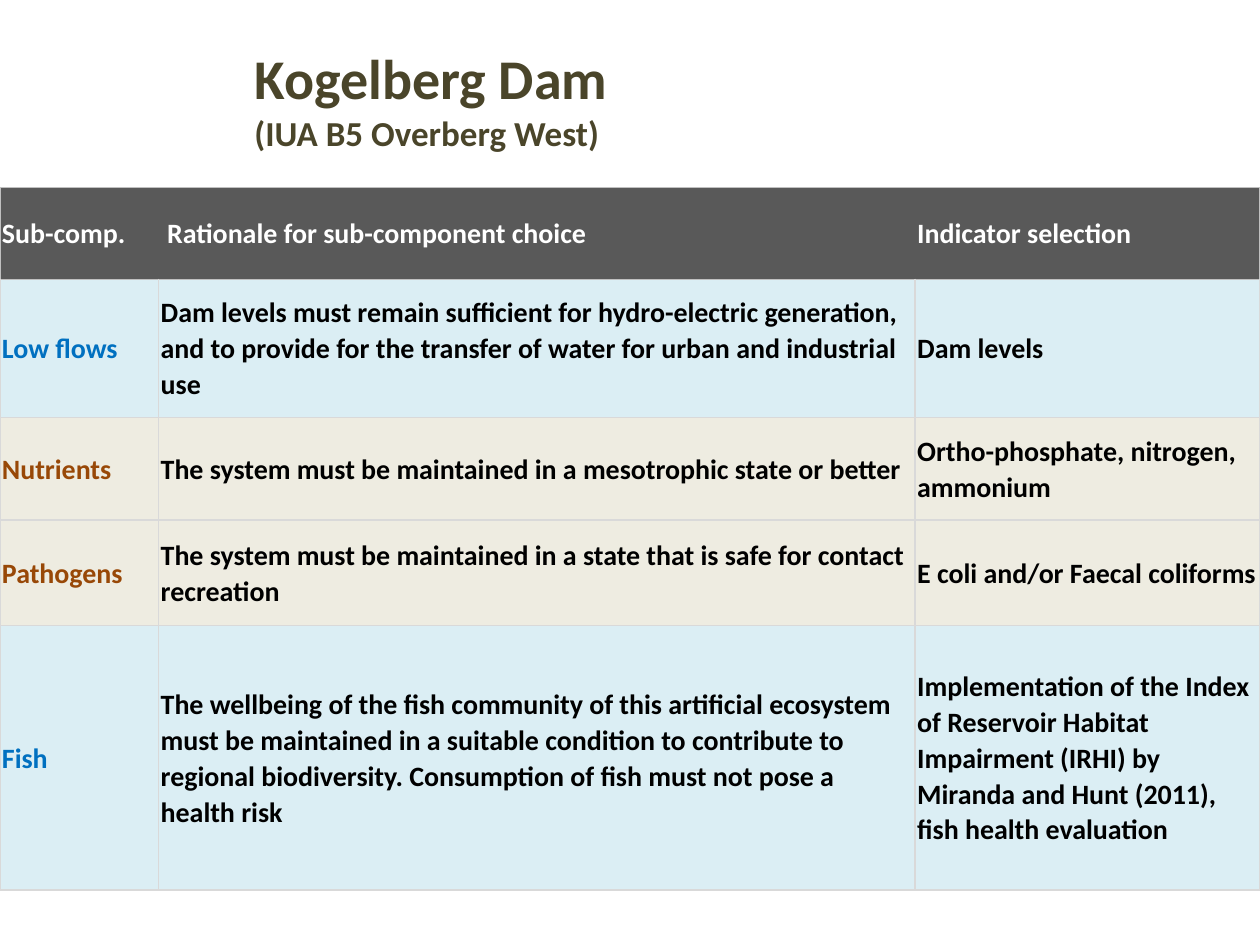
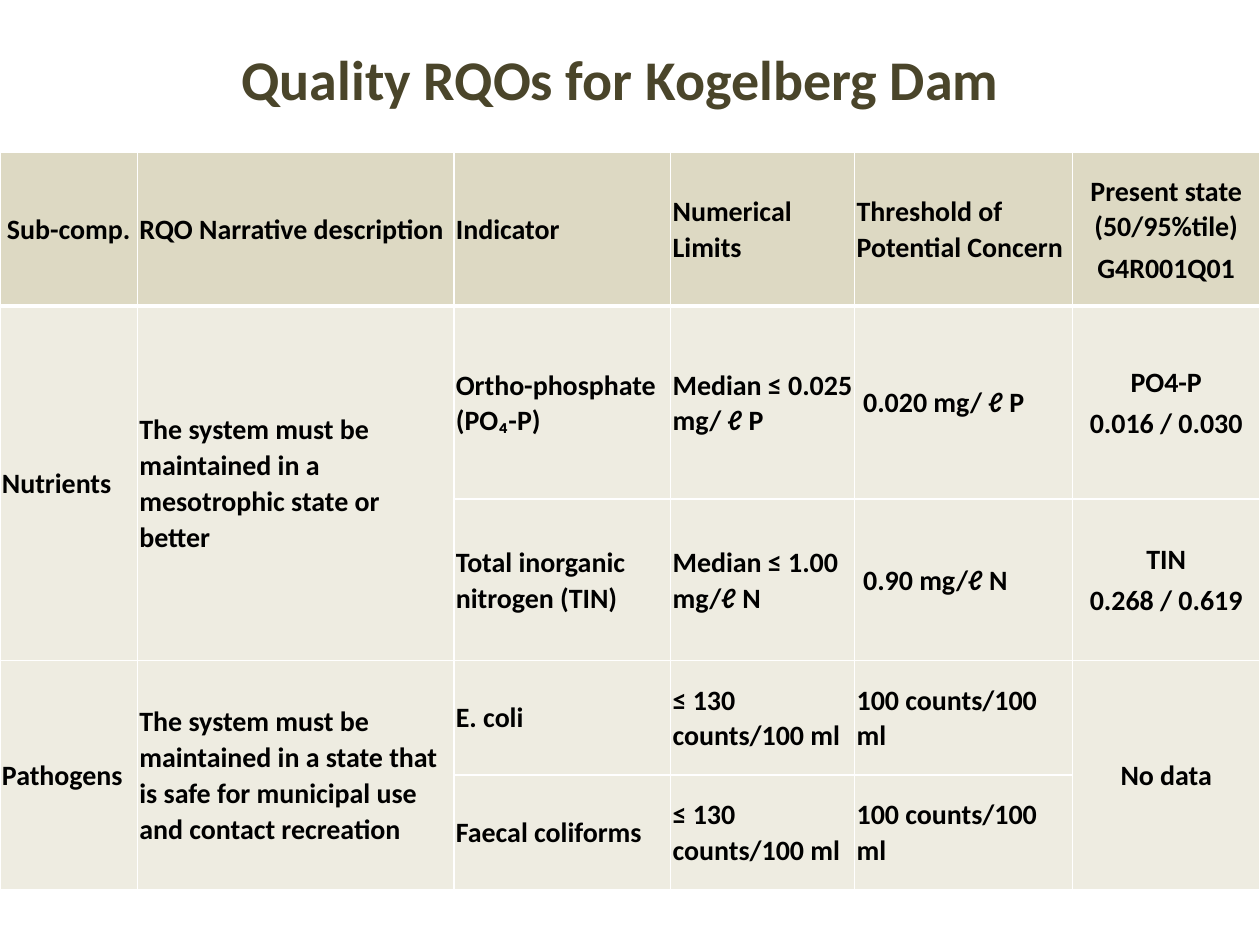
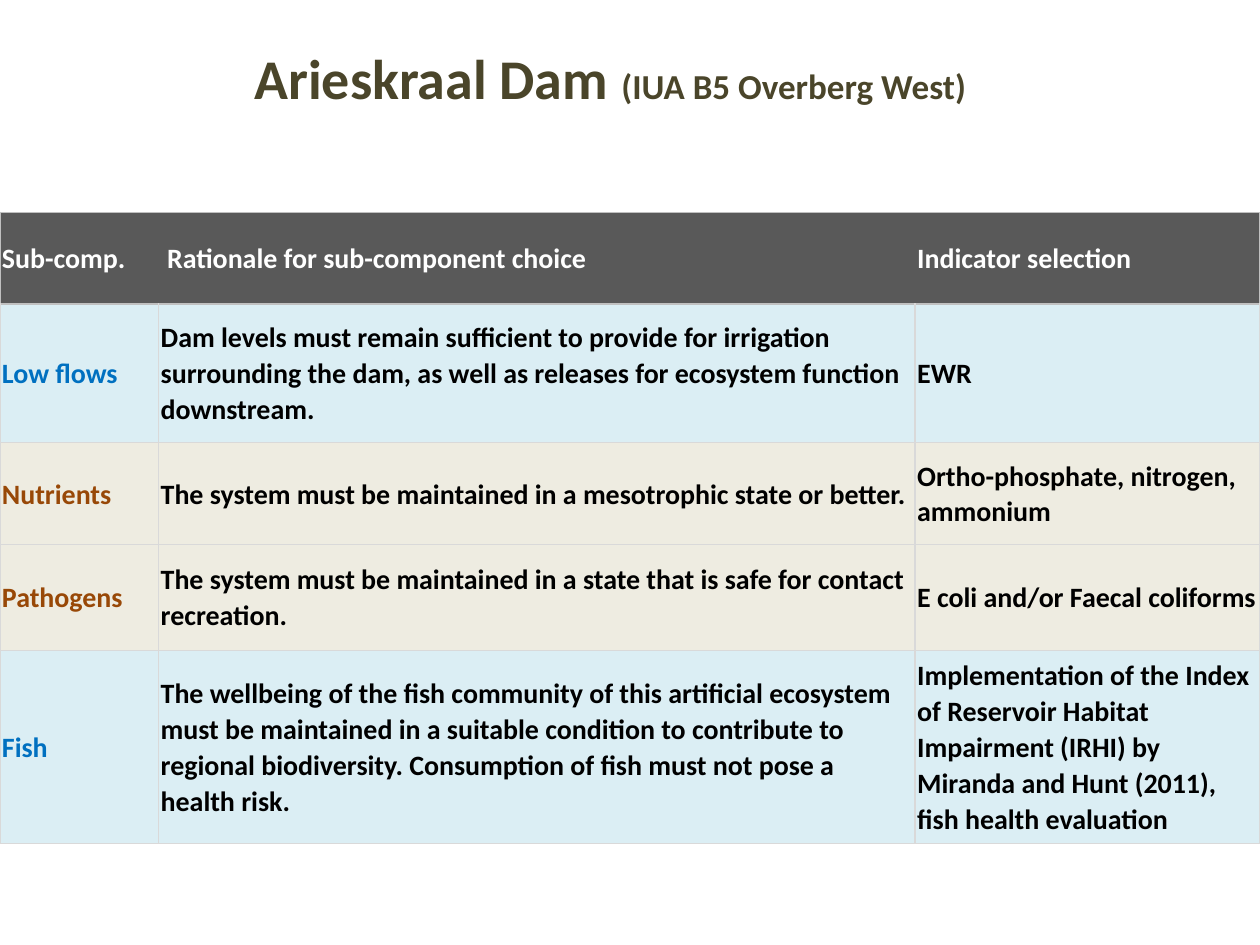
from lxml import etree
from pptx import Presentation
from pptx.dml.color import RGBColor
from pptx.enum.text import MSO_ANCHOR, PP_ALIGN
from pptx.oxml.ns import qn
from pptx.util import Cm, Pt

MIDDLE, TOP = MSO_ANCHOR.MIDDLE, MSO_ANCHOR.TOP
LEFT, CENTER = PP_ALIGN.LEFT, PP_ALIGN.CENTER

FONT = "Calibri"
TITLE_COLOR, BLACK, WHITE = "4A452A", "000000", "FFFFFF"
HEADER_GREY, HEADER_SAND = "595959", "DDD9C3"
PALE_BLUE, PALE_SAND = "DBEEF4", "EEECE1"
FLOW_BLUE, QUALITY_BROWN = "0070C0", "984807"
LIGHT_LINE, DARK_LINE = "D9D9D9", "C0C0C0"

SLIDE_WIDTH, SLIDE_HEIGHT = 25.4, 19.05
TITLE_SIZE, SUBTITLE_SIZE, TABLE_SIZE = 32, 20, 16
CELL_MARGIN = Cm(0.04)
CELL_INDENT = Cm(0.13)

RATIONALE_WIDTHS = [3.2, 15.25, 6.95]
RATIONALE_HEIGHTS = [1.85, 2.79, 2.06, 2.13]
RATIONALE_HEADER = ["Sub-comp.", "Rationale for sub-component choice", "Indicator selection"]
ROW_STYLES = {  # sub-component: (name colour, fill)
    "Low flows": (FLOW_BLUE, PALE_BLUE),
    "Nutrients": (QUALITY_BROWN, PALE_SAND),
    "Pathogens": (QUALITY_BROWN, PALE_SAND),
    "Fish": (FLOW_BLUE, PALE_BLUE),
}
MESOTROPHIC = "The system must be maintained in a mesotrophic state or better"
SAFE_CONTACT = "The system must be maintained in a state that is safe for contact recreation"
FISH_WELLBEING = (
    "The wellbeing of the fish community of this artificial ecosystem must be maintained "
    "in a suitable condition to contribute to regional biodiversity. "
    "Consumption of fish must not pose a health risk")
FISH_INDICATOR = (
    "Implementation of the Index of Reservoir Habitat Impairment (IRHI) "
    "by Miranda and Hunt (2011), fish health evaluation")

QUALITY_WIDTHS = [2.77, 6.38, 4.37, 3.71, 4.39, 3.78]
QUALITY_HEIGHTS = [3.1, 3.89, 3.25, 2.31, 2.31]
QUALITY_ROWS = [
    ["Sub-comp.", "RQO Narrative description", "Indicator", "Numerical Limits",
     "Threshold of Potential Concern", "Present state (50/95%tile)\nG4R001Q01"],
    ["Nutrients", MESOTROPHIC, "Ortho-phosphate (PO₄-P)", "Median ≤ 0.025 mg/ ℓ P",
     "0.020 mg/ ℓ P", "PO4-P\n0.016 / 0.030"],
    [None, None, "Total inorganic nitrogen (TIN)", "Median ≤ 1.00 mg/ℓ N",
     "0.90 mg/ℓ N", "TIN\n0.268 / 0.619"],
    ["Pathogens",
     "The system must be maintained in a state that is safe for municipal use "
     "and contact recreation",
     "E. coli", "≤ 130 counts/100 ml", "100 counts/100 ml", "No data"],
    [None, None, "Faecal coliforms", "≤ 130 counts/100 ml", "100 counts/100 ml", None],
]
QUALITY_INDENTED = {(1, 4), (2, 4)}


def color(value):
    return RGBColor.from_string(value)


def add_span(para, text, size, text_color):
    span = para.add_run()
    span.text = text
    span.font.name = FONT
    span.font.size = Pt(size)
    span.font.bold = True
    span.font.color.rgb = color(text_color)


def add_title(page, box, title, subtitle=None, stacked=False):
    """Write the title, with the subtitle beside it or, if stacked, below it."""
    frame = page.shapes.add_textbox(*(Cm(length) for length in box)).text_frame
    frame.word_wrap = True
    frame.vertical_anchor = TOP
    para = frame.paragraphs[0]
    add_span(para, title, TITLE_SIZE, TITLE_COLOR)
    if subtitle:
        if stacked:
            para.add_line_break()
        add_span(para, subtitle, SUBTITLE_SIZE, TITLE_COLOR)


def set_borders(cell, borders):
    """Draw each side (L, R, T, B) as (colour, points), or leave it out if None."""
    properties = cell._tc.get_or_add_tcPr()
    for side in "LRTB":
        line = etree.SubElement(properties, qn(f"a:ln{side}"))
        if borders[side] is None:
            etree.SubElement(line, qn("a:noFill"))
            continue
        line_color, points = borders[side]
        line.set("w", str(Pt(points)))
        fill = etree.SubElement(line, qn("a:solidFill"))
        etree.SubElement(fill, qn("a:srgbClr"), val=line_color)


def style_cell(cell, fill, borders):
    set_borders(cell, borders)
    cell.fill.solid()
    cell.fill.fore_color.rgb = color(fill)
    cell.vertical_anchor = MIDDLE
    cell.margin_left = cell.margin_right = CELL_MARGIN
    cell.margin_top = cell.margin_bottom = 0


def write_cell(cell, text, text_color, align=LEFT, indented=False):
    frame = cell.text_frame
    for index, line in enumerate(text.split("\n")):
        para = frame.add_paragraph() if index else frame.paragraphs[0]
        para.alignment = align
        para.line_spacing = 1.05
        if index:
            para.space_before = Pt(3)
        if indented:
            para._p.get_or_add_pPr().set("marL", str(CELL_INDENT))
        add_span(para, line, TABLE_SIZE, text_color)


def add_grid(page, top, widths, heights):
    """Add a plain table across the slide."""
    table = page.shapes.add_table(
        len(heights), len(widths), 0, Cm(top), Cm(sum(widths)), Cm(sum(heights))).table
    table.first_row = table.horz_banding = False
    for column, width in zip(table.columns, widths):
        column.width = Cm(width)
    for row, height in zip(table.rows, heights):
        row.height = Cm(height)
    return table


def add_rationale_table(page, top, fish_height, rows):
    table = add_grid(page, top, RATIONALE_WIDTHS, RATIONALE_HEIGHTS + [fish_height])
    dark, light = (DARK_LINE, 1), (LIGHT_LINE, 1)
    last = len(RATIONALE_WIDTHS) - 1
    for column, text in enumerate(RATIONALE_HEADER):
        cell = table.cell(0, column)
        style_cell(cell, HEADER_GREY, {
            "L": dark if column == 0 else None,
            "R": dark if column == last else None,
            "T": dark, "B": dark})
        write_cell(cell, text, WHITE, indented=column == 1)
    for row, texts in enumerate(rows, 1):
        name_color, fill = ROW_STYLES[texts[0]]
        borders = {"L": light, "R": light, "T": dark if row == 1 else light, "B": light}
        for column, text in enumerate(texts):
            cell = table.cell(row, column)
            style_cell(cell, fill, borders)
            write_cell(cell, text, BLACK if column else name_color)


def add_quality_table(page, top):
    table = add_grid(page, top, QUALITY_WIDTHS, QUALITY_HEIGHTS)
    thin, thick = (WHITE, 1), (WHITE, 3)
    last = len(QUALITY_WIDTHS) - 1
    for row, texts in enumerate(QUALITY_ROWS):
        borders = {"L": thin, "R": thin,
                   "T": thick if row == 1 else thin, "B": thick if row == 0 else thin}
        for column, text in enumerate(texts):
            cell = table.cell(row, column)
            style_cell(cell, PALE_SAND if row else HEADER_SAND, borders)
            if text is None:
                table.cell(row - 1, column).merge(cell)
                continue
            centered = column == last or (row, column) == (0, 0)
            write_cell(cell, text, BLACK, CENTER if centered else LEFT,
                       (row, column) in QUALITY_INDENTED)


def rationale_rows(low_flows, flow_indicator, ending=""):
    return [
        ["Low flows", low_flows + ending, flow_indicator],
        ["Nutrients", MESOTROPHIC + ending, "Ortho-phosphate, nitrogen, ammonium"],
        ["Pathogens", SAFE_CONTACT + ending, "E coli and/or Faecal coliforms"],
        ["Fish", FISH_WELLBEING + ending, FISH_INDICATOR],
    ]


def main():
    deck = Presentation()
    deck.slide_width, deck.slide_height = Cm(SLIDE_WIDTH), Cm(SLIDE_HEIGHT)
    kogelberg, quality, arieskraal = (
        deck.slides.add_slide(deck.slide_layouts[6]) for _ in range(3))

    add_title(kogelberg, (4.88, 0.76, 20.52, 2.49), "Kogelberg Dam",
              "(IUA B5 Overberg West)", stacked=True)
    add_rationale_table(kogelberg, 3.78, 5.33, rationale_rows(
        "Dam levels must remain sufficient for hydro-electric generation, and to provide "
        "for the transfer of water for urban and industrial use", "Dam levels"))

    add_title(quality, (4.62, 0.78, 19.5, 1.63), "Quality RQOs for Kogelberg Dam")
    add_quality_table(quality, 3.07)

    add_title(arieskraal, (4.88, 0.76, 20.52, 1.63), "Arieskraal Dam ",
              "(IUA B5 Overberg West)")
    add_rationale_table(arieskraal, 4.28, 3.89, rationale_rows(
        "Dam levels must remain sufficient to provide for irrigation surrounding the dam, "
        "as well as releases for ecosystem function downstream", "EWR", ending="."))

    deck.save("out.pptx")


if __name__ == "__main__":
    main()
